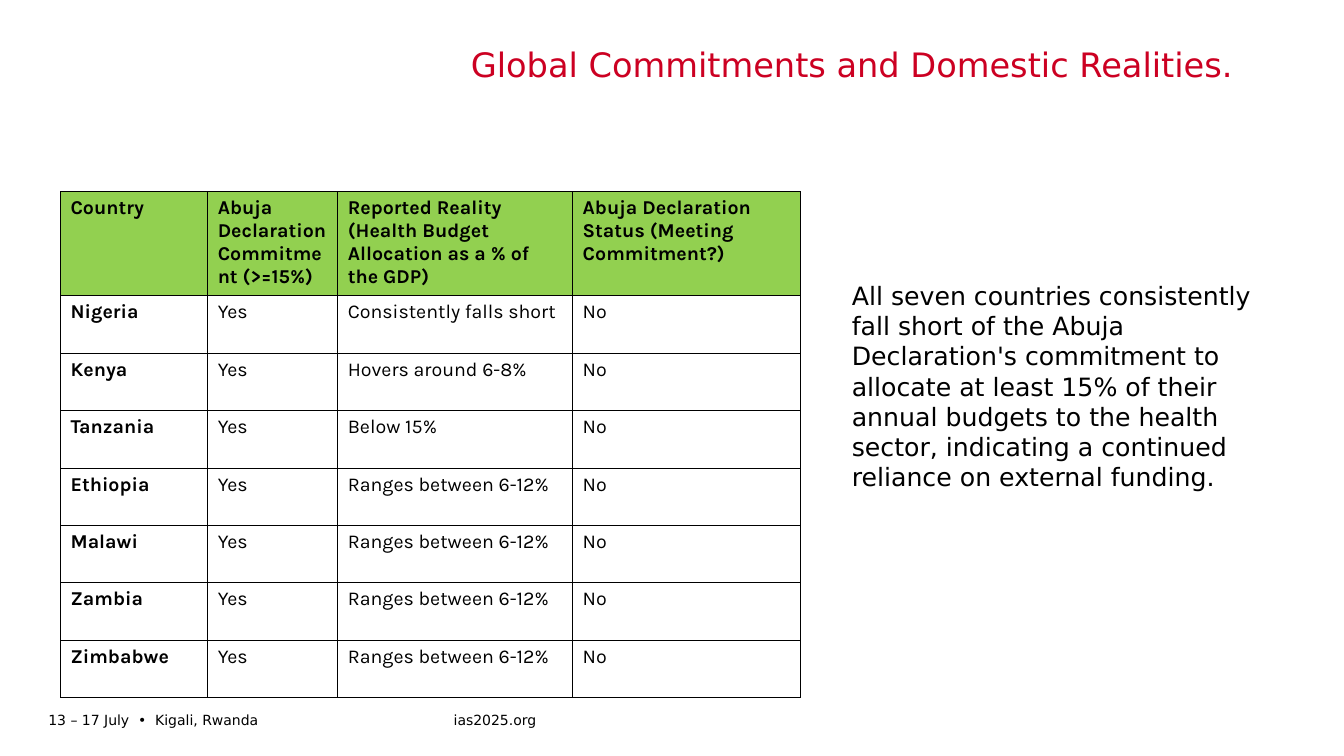
from lxml.etree import SubElement
from pptx import Presentation
from pptx.dml.color import RGBColor
from pptx.enum.text import MSO_ANCHOR as Anchor, MSO_AUTO_SIZE as AutoSize, PP_ALIGN as Align
from pptx.oxml.ns import qn
from pptx.util import Inches, Pt

BLACK = RGBColor(0x00, 0x00, 0x00)
CRIMSON = RGBColor(0xCC, 0x00, 0x22)
GREEN = RGBColor(0x92, 0xD0, 0x50)

HEADINGS = [
    "Country",
    "Abuja Declaration Commitment (>=15%)",
    "Reported Reality (Health Budget Allocation as a % of the GDP)",
    "Abuja Declaration Status (Meeting Commitment?)",
]
REALITIES = {
    "Nigeria": "Consistently falls short",
    "Kenya": "Hovers around 6-8%",
    "Tanzania": "Below 15%",
    "Ethiopia": "Ranges between 6-12%",
    "Malawi": "Ranges between 6-12%",
    "Zambia": "Ranges between 6-12%",
    "Zimbabwe": "Ranges between 6-12%",
}
COLUMN_WIDTHS = [1.46, 1.29, 2.33, 2.26]
HEADER_HEIGHT, ROW_HEIGHT = 0.93, 0.57
MESSAGE = (
    "All seven countries consistently fall short of the Abuja Declaration's "
    "commitment to allocate at least 15% of their annual budgets to the health "
    "sector, indicating a continued reliance on external funding."
)


class SlideBuilder:
    """Holds the text style and the current slide, and adds elements to it."""

    text_font = "DejaVu Sans"
    table_font = "Karla"

    def __init__(self, deck):
        self.page = deck.slides.add_slide(deck.slide_layouts[5])

    def style_text(self, frame, text, size, color=BLACK, font=text_font, bold=False):
        frame.text = text
        frame.word_wrap = True
        para = frame.paragraphs[0]
        para.alignment = Align.LEFT
        for span in para.runs:
            span.font.name = font
            span.font.size = Pt(size)
            span.font.bold = bold
            span.font.color.rgb = color

    def clear_margins(self, frame):
        frame.margin_left = frame.margin_right = 0
        frame.margin_top = frame.margin_bottom = 0

    def title(self, text, left, top, width, height):
        box = self.page.shapes.title
        box.left, box.top = Inches(left), Inches(top)
        box.width, box.height = Inches(width), Inches(height)
        frame = box.text_frame
        self.style_text(frame, text, 24, CRIMSON)
        self.clear_margins(frame)
        frame.auto_size = AutoSize.NONE
        frame.vertical_anchor = Anchor.TOP
        frame.paragraphs[0].line_spacing = 0.9

    def textbox(self, text, left, top, width, height, size):
        box = self.page.shapes.add_textbox(
            Inches(left), Inches(top), Inches(width), Inches(height))
        self.style_text(box.text_frame, text, size)
        return box.text_frame

    def footer(self, text, left, width):
        frame = self.textbox(text, left, 7.02, width, 0.24, 10)
        self.clear_margins(frame)
        frame.vertical_anchor = Anchor.MIDDLE

    def border(self, cell):
        properties = cell._tc.get_or_add_tcPr()
        for position, side in enumerate(("lnL", "lnR", "lnT", "lnB")):
            line = SubElement(properties, qn(f"a:{side}"), w=str(Pt(0.75)))
            fill = SubElement(line, qn("a:solidFill"))
            SubElement(fill, qn("a:srgbClr"), val=str(BLACK))
            properties.insert(position, line)

    def table(self, rows, left, top):
        heights = [HEADER_HEIGHT] + [ROW_HEIGHT] * (len(rows) - 1)
        grid = self.page.shapes.add_table(
            len(rows), len(COLUMN_WIDTHS), Inches(left), Inches(top),
            Inches(sum(COLUMN_WIDTHS)), Inches(sum(heights))).table
        for column, width in zip(grid.columns, COLUMN_WIDTHS):
            column.width = Inches(width)
        for row, height in zip(grid.rows, heights):
            row.height = Inches(height)
        for row_index, values in enumerate(rows):
            for column_index, value in enumerate(values):
                cell = grid.cell(row_index, column_index)
                is_header = row_index == 0
                self.style_text(cell.text_frame, value, 14, font=self.table_font,
                                bold=is_header or column_index == 0)
                if is_header:
                    cell.fill.solid()
                    cell.fill.fore_color.rgb = GREEN
                else:
                    cell.fill.background()
                self.border(cell)


def main():
    deck = Presentation()
    deck.slide_width, deck.slide_height = Inches(13.33), Inches(7.5)
    builder = SlideBuilder(deck)
    builder.footer("13 – 17 July  •  Kigali, Rwanda", 0.48, 4.02)
    builder.footer("ias2025.org", 4.5, 1.93)
    builder.title("Global Commitments and Domestic Realities.", 4.67, 0.48, 8.18, 0.58)
    rows = [[country, "Yes", reality, "No"] for country, reality in REALITIES.items()]
    builder.table([HEADINGS] + rows, 0.6, 1.9)
    message = builder.textbox(MESSAGE, 8.35, 2.73, 4.38, 2.22, 18)
    message.auto_size = AutoSize.SHAPE_TO_FIT_TEXT
    deck.save("out.pptx")


if __name__ == "__main__":
    main()
